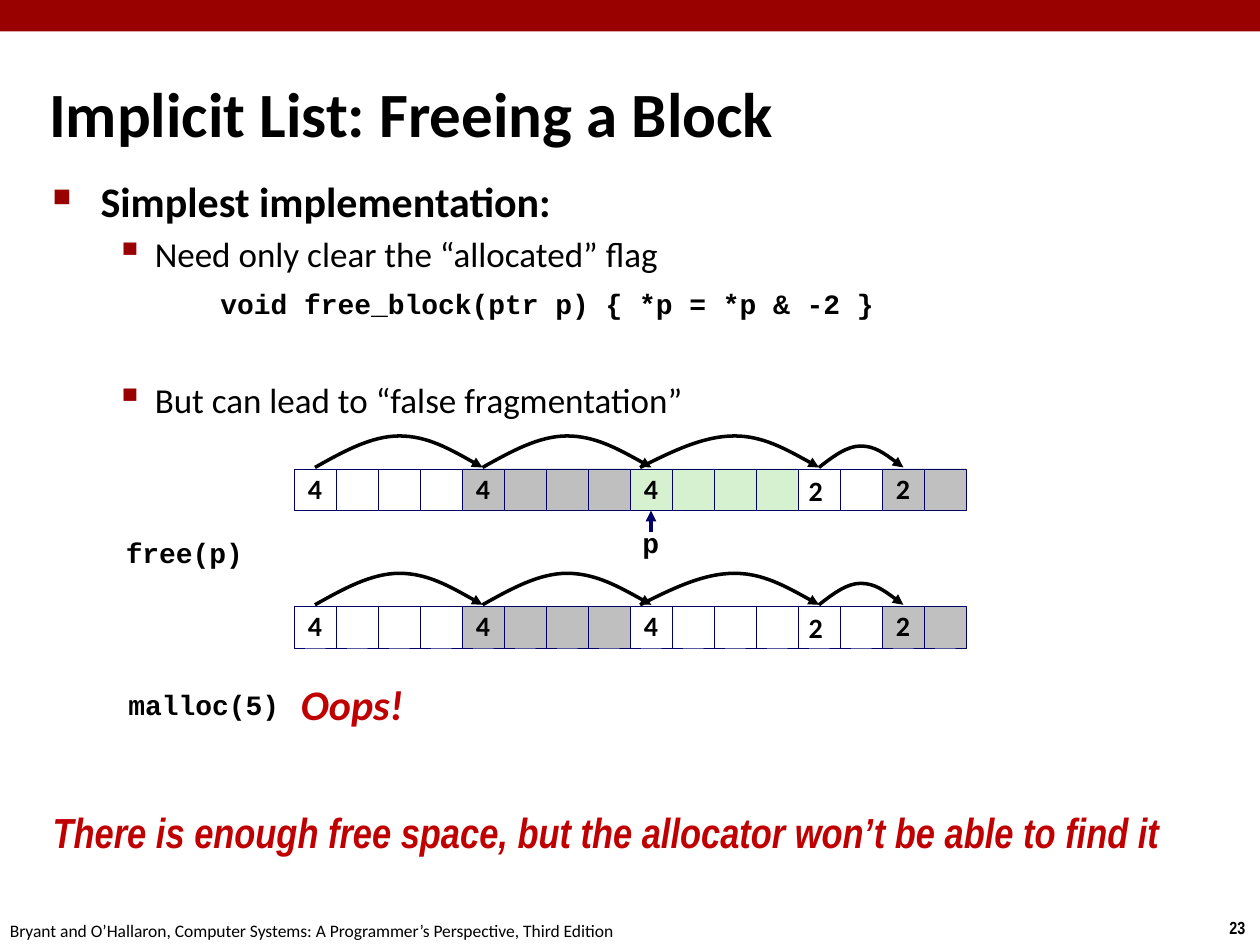
from lxml.etree import SubElement
from pptx import Presentation
from pptx.dml.color import RGBColor
from pptx.enum.shapes import MSO_CONNECTOR as Connector, MSO_SHAPE as Preset
from pptx.enum.text import MSO_ANCHOR as Anchor, MSO_AUTO_SIZE as AutoSize, PP_ALIGN as Align
from pptx.oxml.ns import qn
from pptx.util import Inches, Pt

COLORS = {"black": "000000", "white": "FFFFFF", "band": "990000", "alert": "C00000",
          "navy": "000066", "gray": "BFBFBF", "silver": "C0C0C0", "green": "D5F1CF"}

TITLE = "Implicit List: Freeing a Block"
HEADING = {"name": "Calibri", "size": Pt(36), "bold": True}
POINT = {"name": "Calibri", "size": Pt(24), "bold": True}
DETAIL = {"name": "Calibri", "size": Pt(20), "bold": False}
CODE = {"name": "Courier New", "size": Pt(16), "bold": True}
NUMBER = {"name": "Calibri", "size": Pt(16), "bold": True}
FOOTER = {"name": "Calibri", "size": Pt(10)}
PAGE = {"name": "Arial Narrow", "size": Pt(10), "bold": True}
OOPS = {"name": "Calibri", "size": Pt(24), "bold": True, "italic": True}
MORAL = OOPS | {"name": "Arial Narrow"}

# text, font, left margin, hanging indent, space before, (bullet, percent)
OUTLINE = [
    ("Simplest implementation:", POINT, 0.38, 0.38, 0, ("■", 60)),
    ("Need only clear the “allocated” flag", DETAIL, 0.81, 0.31, 4, ("▪", 110)),
    ("void free_block(ptr p) { *p = *p & -2 }", CODE, 1.33, 0, 7, None),
    ("But can lead to “false fragmentation”", DETAIL, 0.81, 0.31, 33, ("▪", 110)),
]

# text, left, top, width, height, font, color, line spacing
LABELS = [
    ("23", 9.66, 7.23, 0.34, 0.27, PAGE, "black", 1),
    ("Bryant and O’Hallaron, Computer Systems: A Programmer’s Perspective, Third Edition",
     -0.02, 7.25, 5.08, 0.27, FOOTER, "black", 1),
    ("free(p)", 0.9, 4.22, 1.14, 0.36, CODE, "black", 0.94),
    ("p", 5, 4.14, 0.33, 0.36, CODE, "black", 0.94),
    ("malloc(5)", 0.92, 5.43, 1.41, 0.36, CODE, "black", 0.94),
    ("Oops!", 2.29, 5.33, 1.03, 0.5, OOPS, "alert", 1.02),
    ("There is enough free space, but the allocator won’t be able to find it",
     0.32, 6.35, 9.13, 0.81, MORAL, "alert", 1),
]

HEAP_LEFT, CELL = 7 / 3, 1 / 3
# row top, blocks as (header, words, color)
HEAPS = [
    (3.72, [("4", 4, "white"), ("4", 4, "gray"), ("4", 4, "green"),
            ("", 2, "white"), ("2", 2, "silver")]),
    (4.81, [("4", 4, "white"), ("4", 4, "gray"), ("4", 4, "white"),
            ("", 2, "white"), ("2", 2, "silver")]),
]
OFFSET_HEADER = ("2", 6.32)  # header of the fourth block, set left of the cell's middle
FREED_CELL = 8
# start, peak and end across, then height
HOPS = [(2.5, 3.17, 3.83, 0.25), (3.83, 4.5, 5.17, 0.25),
        (5.08, 5.83, 6.5, 0.25), (6.5, 6.83, 7.17, 0.17)]


def color(key):
    return RGBColor.from_string(COLORS[key])


def write(paragraph, text, font, ink="black", **layout):
    run = paragraph.add_run()
    run.text = text
    for name, value in font.items():
        setattr(run.font, name, value)
    run.font.color.rgb = color(ink)
    for name, value in layout.items():
        setattr(paragraph, name, value)


def add_label(shapes, text, left, top, width, height, font, ink, spacing):
    box = shapes.add_textbox(*map(Inches, (left, top, width, height)))
    frame = box.text_frame
    frame.word_wrap = False
    frame.auto_size = AutoSize.SHAPE_TO_FIT_TEXT
    write(frame.paragraphs[0], text, font, ink, line_spacing=spacing)


def add_rect(shapes, left, top, width, height, fill):
    rect = shapes.add_shape(Preset.RECTANGLE, *map(Inches, (left, top, width, height)))
    rect.shadow.inherit = False
    rect.fill.solid()
    rect.fill.fore_color.rgb = color(fill)
    rect.line.fill.background()
    return rect


def set_arrow(line, ink):
    line.color.rgb = color(ink)
    line.width = Pt(2)
    SubElement(line._get_or_add_ln(), qn("a:tailEnd"), type="triangle")


def add_hop(shapes, start, peak, end, height, base):
    """Draw an arched arrow of two Bézier curves that meet at the peak."""
    top, half = base - height, base - height / 2
    rise, fall = (peak - start) / 3, (end - peak) / 3
    points = [(start + rise, half), (peak - rise, top), (peak, top),
              (peak + fall, top), (end - fall, half), (end, base)]
    builder = shapes.build_freeform(Inches(start), Inches(base))
    builder.add_line_segments([(Inches(x), Inches(y)) for x, y in points], close=False)
    hop = builder.convert_to_shape()
    outline = next(hop.element.iter(qn("a:path")))
    segments = outline.findall(qn("a:lnTo"))
    for first in (0, 3):
        curve = SubElement(outline, qn("a:cubicBezTo"))
        for segment in segments[first:first + 3]:
            curve.append(segment[0])
            outline.remove(segment)
    hop.shadow.inherit = False
    hop.fill.background()
    set_arrow(hop.line, "black")


def add_heap(shapes, top, blocks):
    cells = []
    for header, words, fill in blocks:
        for word in range(words):
            cell = add_rect(shapes, HEAP_LEFT + len(cells) * CELL, top, CELL, CELL, fill)
            cell.line.color.rgb = color("navy")
            cell.line.width = Pt(0.25)
            if header and word == 0:
                cell.text_frame.word_wrap = False
                cell.text_frame.vertical_anchor = Anchor.MIDDLE
                write(cell.text_frame.paragraphs[0], header, NUMBER,
                      alignment=Align.CENTER, line_spacing=0.98)
            cells.append(cell)
    text, left = OFFSET_HEADER
    add_label(shapes, text, left, top, 0.31, 0.37, NUMBER, "black", 0.98)
    for hop in HOPS:
        add_hop(shapes, *hop, top - 0.01)
    return cells


def add_outline(shapes):
    frame = shapes.add_textbox(*map(Inches, (0.32, 1.34, 9.09, 4.75))).text_frame
    frame.word_wrap = True
    for index, (text, font, margin, hang, before, bullet) in enumerate(OUTLINE):
        paragraph = frame.add_paragraph() if index else frame.paragraphs[0]
        write(paragraph, text, font, space_before=Pt(before))
        properties = paragraph._p.get_or_add_pPr()
        properties.set("marL", str(Inches(margin)))
        properties.set("indent", str(-Inches(hang)))
        if bullet:
            mark, percent = bullet
            tint = SubElement(properties, qn("a:buClr"))
            SubElement(tint, qn("a:srgbClr"), val=COLORS["band"])
            SubElement(properties, qn("a:buSzPct"), val=str(percent * 1000))
            SubElement(properties, qn("a:buChar"), char=mark)


def main():
    deck = Presentation()
    deck.slide_width, deck.slide_height = Inches(10), Inches(7.5)
    slide = deck.slides.add_slide(deck.slide_layouts[5])
    shapes = slide.shapes

    title = shapes.title
    title.left, title.top, title.width, title.height = map(Inches, (0.29, 0.58, 7.88, 0.63))
    title.text_frame.vertical_anchor = Anchor.MIDDLE
    write(title.text_frame.paragraphs[0], TITLE, HEADING, alignment=Align.LEFT)

    add_rect(shapes, 0, 0, 10, 0.25, "band")
    add_outline(shapes)
    before_free, _ = [add_heap(shapes, top, blocks) for top, blocks in HEAPS]
    for label in LABELS:
        add_label(shapes, *label)

    pointer_x = Inches(HEAP_LEFT + (FREED_CELL + 0.5) * CELL)
    pointer = shapes.add_connector(Connector.STRAIGHT, pointer_x, Inches(4.22),
                                   pointer_x, Inches(4.05))
    pointer.end_connect(before_free[FREED_CELL], 2)
    set_arrow(pointer.line, "navy")
    SubElement(pointer.element.spPr, qn("a:effectLst"))

    deck.save("out.pptx")


if __name__ == "__main__":
    main()
